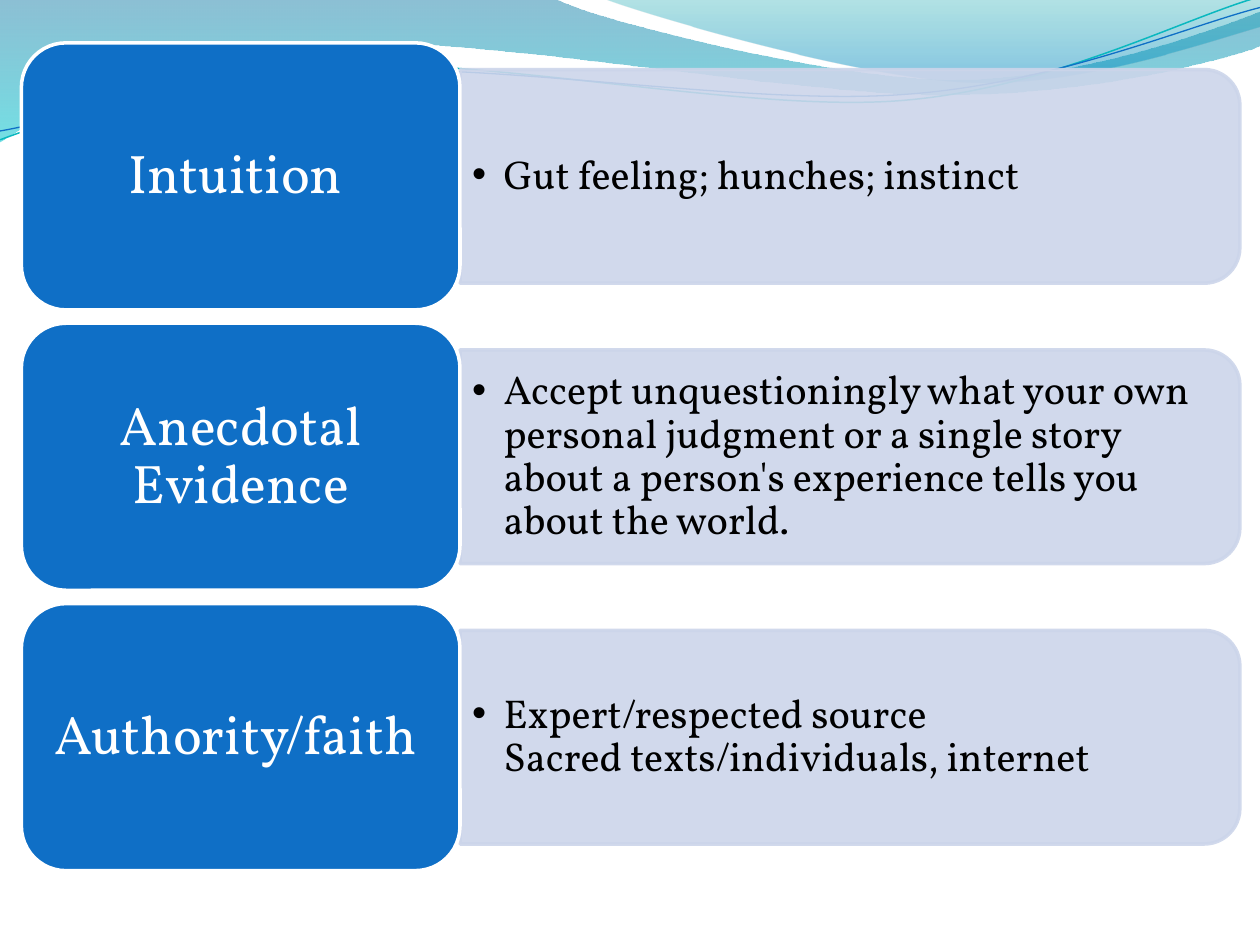
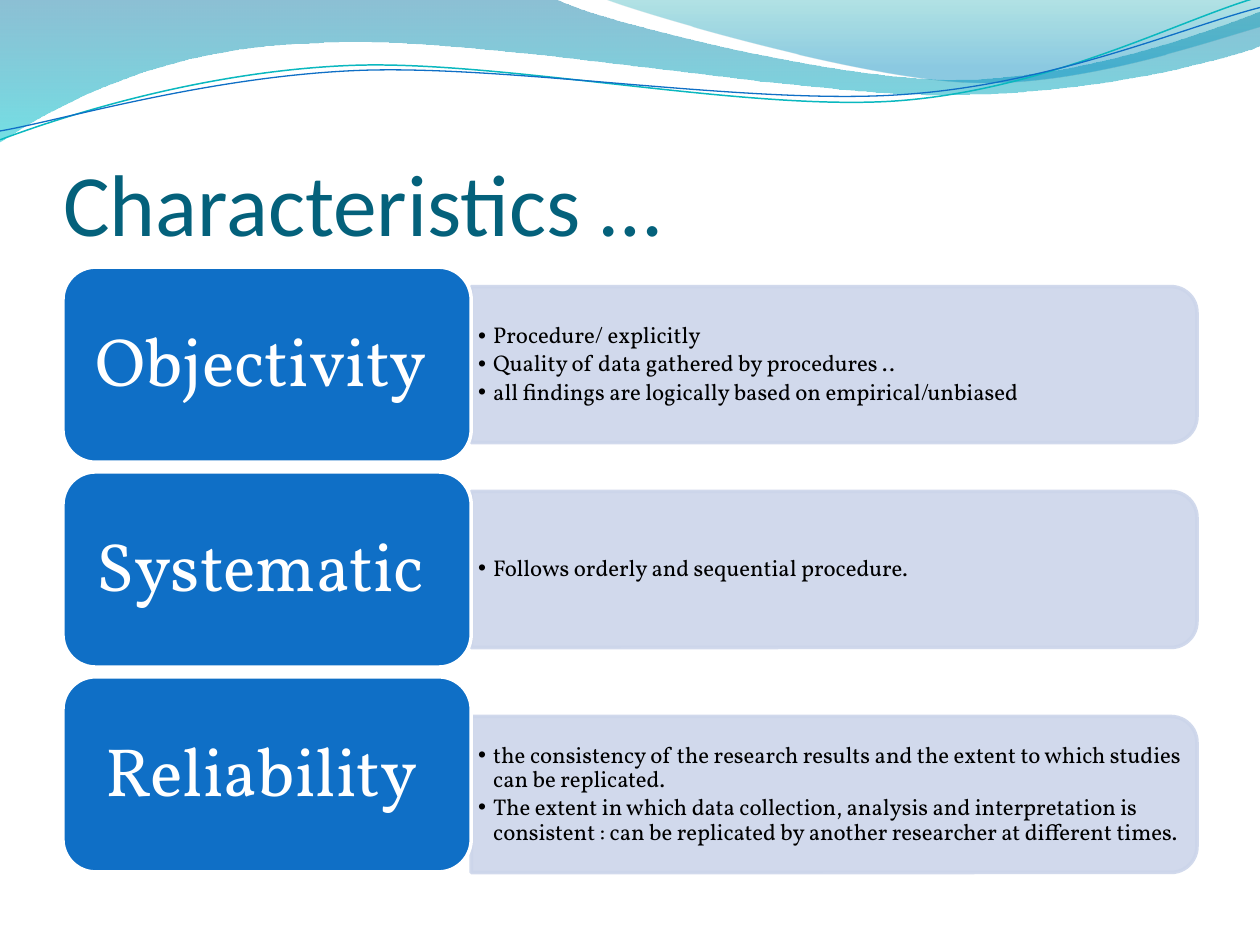
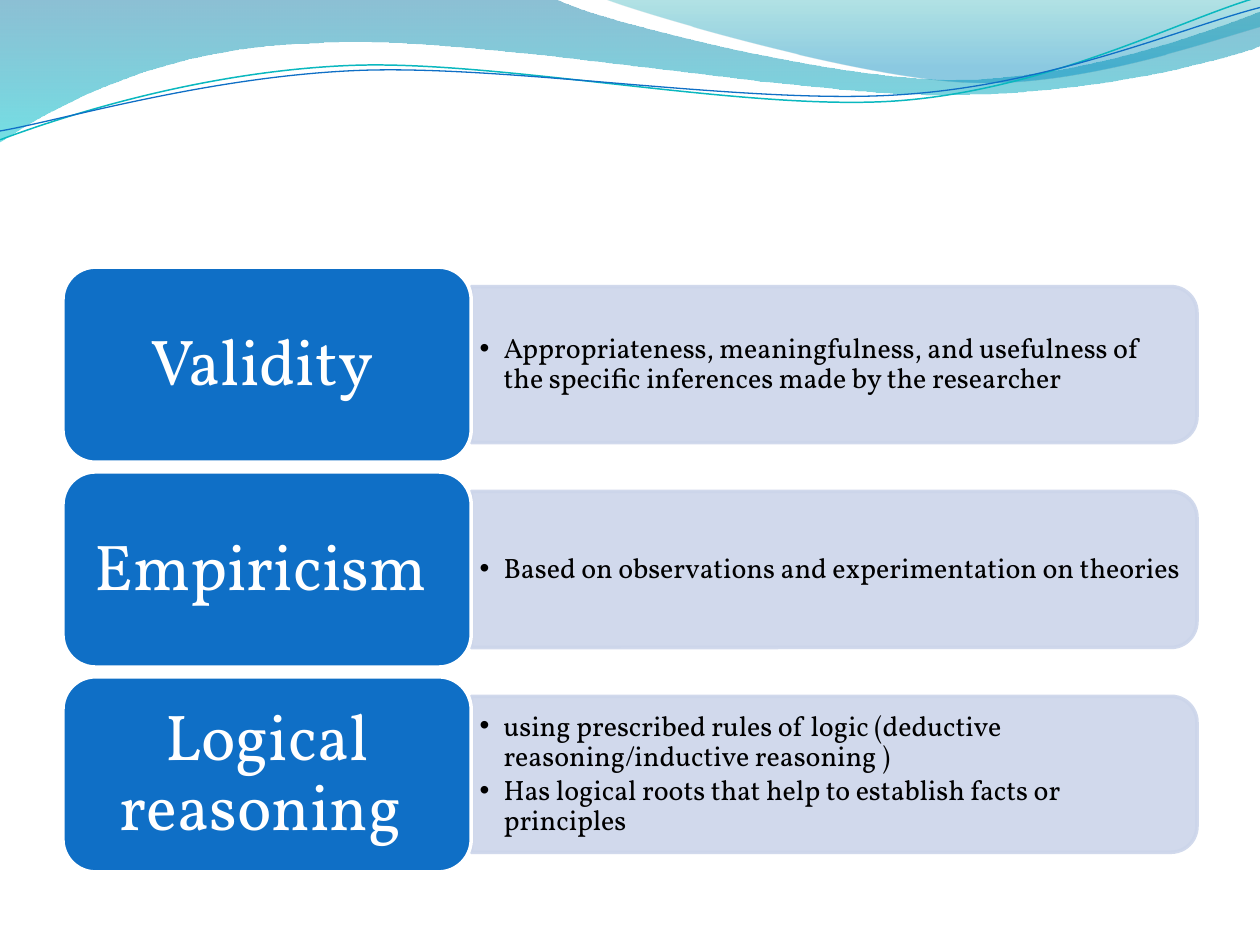
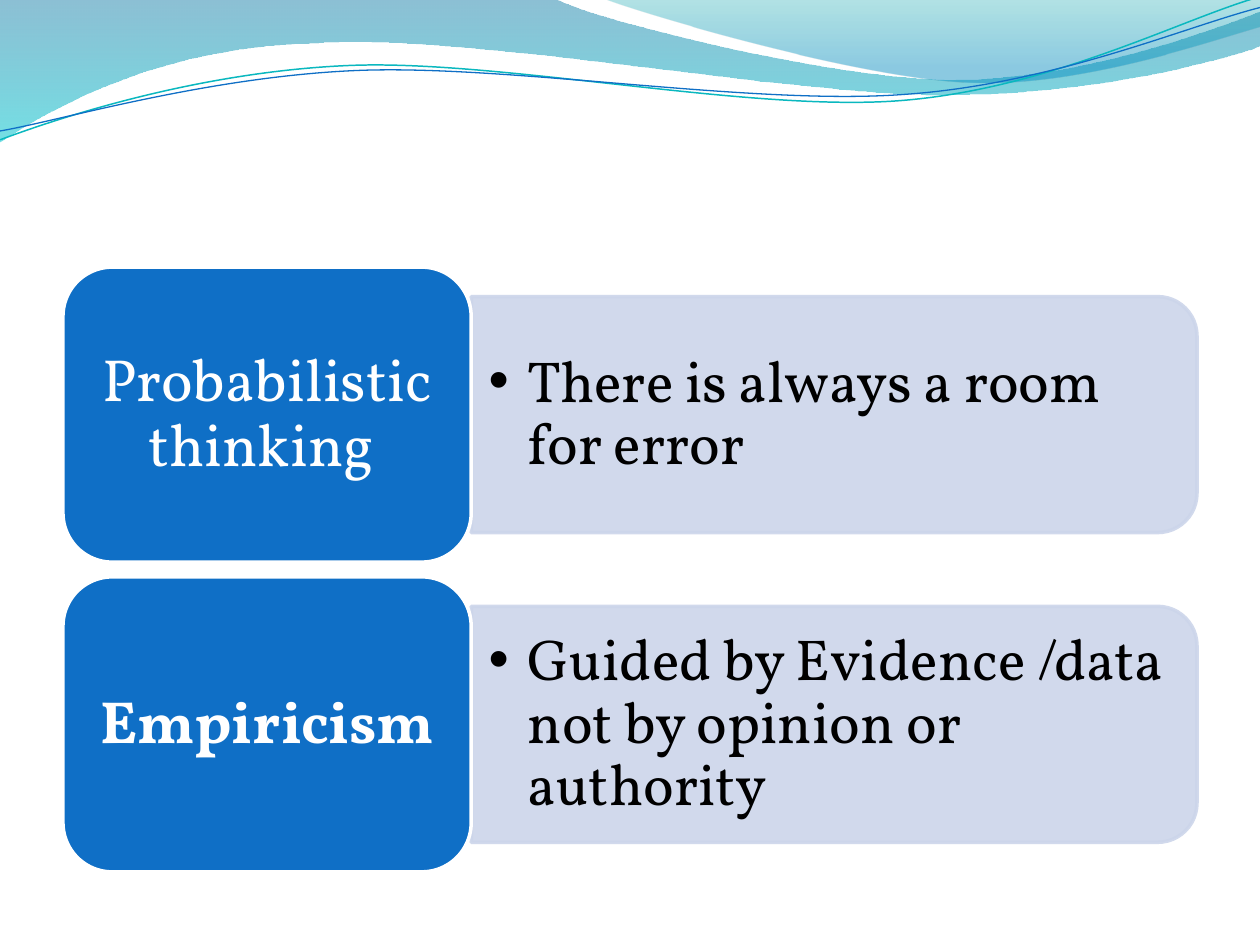
"""Build four slides of label-and-list rows under a shared wave header."""
from math import cos, radians, sin

from lxml.etree import SubElement
from pptx import Presentation
from pptx.dml.color import RGBColor
from pptx.enum.shapes import MSO_SHAPE
from pptx.enum.text import MSO_ANCHOR, MSO_AUTO_SIZE, PP_ALIGN
from pptx.oxml.ns import qn
from pptx.util import Inches, Pt

BLUE, PALE, WHITE, BLACK, TEAL = "0F6FC6", "CCD5EA", "FFFFFF", "000000", "04617B"
LABEL_SHARE, GAP_SHARE, BAND_SHARE, INSET_SHARE = 0.36, 0.05, 0.8, 0.05
TILT = 2.7


def paint(color, value, el=None, alpha=100):
    color.rgb = RGBColor.from_string(value)
    if alpha < 100:
        for clr in el.iter(qn("a:srgbClr")):
            if clr.get("val") == value and len(clr) == 0:
                SubElement(clr, qn("a:alpha")).set("val", str(alpha * 1000))


def write(tf, texts, size, color, font="Vollkorn", align=PP_ALIGN.LEFT, anchor=MSO_ANCHOR.MIDDLE,
          bold=None, spacing=0.9, after=0.0, indent=None, margins=None):
    tf.word_wrap = True
    tf.auto_size = MSO_AUTO_SIZE.NONE
    tf.vertical_anchor = anchor
    side, edge = Pt(size * 0.3), Pt(size * 0.15)
    tf.margin_left, tf.margin_top, tf.margin_right, tf.margin_bottom = margins or (side, edge, side, edge)
    for i, text in enumerate(texts):
        p = tf.add_paragraph() if i else tf.paragraphs[0]
        p.text = text
        p.alignment = align
        p.line_spacing = spacing
        p.space_after = Pt(size * after)
        if indent:
            p.level = 1
            pPr = p._p.get_or_add_pPr()
            pPr.set("marL", str(Inches(indent)))
            pPr.set("indent", str(-Inches(indent)))
            SubElement(pPr, qn("a:buFont")).set("typeface", "Arial")
            SubElement(pPr, qn("a:buChar")).set("char", "•")
        for r in p.runs:
            r.font.name, r.font.size, r.font.bold = font, Pt(size), bold
            paint(r.font.color, color)


waves = [
    dict(start=(0, 0), stops=[(0, "0074A1", 45), (1, "00C6CF", 55)],
         parts=[(4.4, -0.01), (4.76, 0.17, 6.64, 0.63, 7.58, 0.63), (8.53, 0.63, 9.58, 0.26, 10, 0.09),
                (10.01, 0.36), (9.83, 0.44, 8.7, 0.76, 7.46, 0.75), (6.22, 0.75, 3.82, 0.28, 2.57, 0.34),
                (1.29, 0.36, 0.46, 0.83, -0.01, 1.13), (0, 0)]),
    dict(start=(4.79, -0.01), stops=[(0, "00A1A9", 30), (0.8, "008BBF", 45)],
         parts=[(5.09, 0.11, 6.82, 0.62, 7.69, 0.65), (8.56, 0.69, 9.61, 0.32, 10, 0.21), (10, 0),
                (4.79, -0.01)]),
    dict(start=(0, 1.11), line=("0AB8BF", 0.85), center=(4.99, 0.58),
         parts=[(0.48, 0.93, 1.58, 0.57, 2.77, 0.52), (3.95, 0.47, 5.93, 0.89, 7.13, 0.8),
                (8.33, 0.71, 9.38, 0.15, 9.98, -0.02)]),
    dict(start=(0, 1.04), line=(BLUE, 0.75), center=(5, 0.59),
         parts=[(0.47, 0.96, 1.64, 0.61, 2.83, 0.56), (4.03, 0.51, 5.97, 0.84, 7.17, 0.75),
                (8.36, 0.67, 9.41, 0.21, 10, 0.06)]),
]

deck = [
    dict(box=(0.17, 0.34, 9.67, 6.57), sizes=(31, 23), indent=0.25, rows=[
        dict(label="Intuition ", items=["Gut feeling; hunches; instinct"]),
        dict(label="Anecdotal Evidence", items=[
            "Accept unquestioningly what your own personal judgment or a single story "
            "about a person's experience tells you about the world."]),
        dict(label="Authority/faith ", items=[
            "Expert/respected source\vSacred texts/individuals, internet"])]),
    dict(title="Characteristics …", box=(0.5, 2.12, 9, 4.8), sizes=(39, 13), indent=0.12, rows=[
        dict(label="Objectivity ", items=[
            "Procedure/ explicitly",
            "Quality of data gathered by procedures ..",
            "all findings are logically based on empirical/unbiased"]),
        dict(label="Systematic ", items=["Follows orderly and sequential procedure."]),
        dict(label="Reliability ", drop=0.16, items=[
            "the consistency of the research results and the extent to which studies can be replicated.",
            "The extent in which data collection, analysis and interpretation is consistent : "
            "can be replicated by another researcher at different times."])]),
    dict(box=(0.5, 2.12, 9, 4.8), sizes=(37, 16), indent=0.19, rows=[
        dict(label="Validity ", items=[
            "Appropriateness, meaningfulness, and usefulness of the specific inferences "
            "made by the researcher"]),
        dict(label="Empiricism ", items=["Based on observations and experimentation on theories"]),
        dict(label="Logical reasoning ", items=[
            "using prescribed rules of logic (deductive reasoning/inductive reasoning )",
            "Has logical roots that help to establish facts or principles"])]),
    dict(box=(0.5, 2.12, 9, 4.8), sizes=(34, 33), indent=0.31, rows=[
        dict(label="Probabilistic thinking ", items=["There is always a room for error"]),
        dict(label="Empiricism ", bold=True, items=[
            "Guided by Evidence /data not by opinion or authority"])]),
]

prs = Presentation()
prs.slide_width, prs.slide_height = Inches(10), Inches(7.5)
title_only, blank = prs.slide_layouts[5], prs.slide_layouts[6]
slides = [prs.slides.add_slide(title_only if "title" in d else blank) for d in deck]

tree = prs.slide_master.shapes._spTree
for i, wave in enumerate(waves):
    parts = [list(zip(part[::2], part[1::2])) for part in [wave["start"], *wave["parts"]]]
    if "center" in wave:
        cx, cy = wave["center"]
        c, n = cos(radians(TILT)), sin(radians(TILT))
        parts = [[(cx + (x - cx) * c - (y - cy) * n, cy + (x - cx) * n + (y - cy) * c) for x, y in part]
                 for part in parts]
    parts = [[(Inches(x), Inches(y)) for x, y in part] for part in parts]
    fb = slides[0].shapes.build_freeform(*parts[0][0])
    fb.add_line_segments([part[-1] for part in parts[1:]], close="stops" in wave)
    sp = fb.convert_to_shape()
    for ln, part in zip(list(sp.element.iter(qn("a:lnTo"))), parts[1:]):
        if len(part) == 3:
            ln.tag = qn("a:cubicBezTo")
            for k, (x, y) in enumerate(part[:2]):
                pt = SubElement(ln, qn("a:pt"), x=str(x - sp.left), y=str(y - sp.top))
                ln.insert(k, pt)
    sp.shadow.inherit = False
    if "stops" in wave:
        sp.fill.gradient()
        sp.fill.gradient_angle = 270
        for stop, (position, value, alpha) in zip(sp.fill.gradient_stops, wave["stops"]):
            stop.position = position
            paint(stop.color, value, sp.element, alpha)
        sp.line.fill.background()
    else:
        value, width = wave["line"]
        sp.rotation = -TILT
        sp.fill.background()
        paint(sp.line.color, value)
        sp.line.width = Pt(width)
    sp.element.nvSpPr.cNvPr.set("id", str(20 + i))
    tree.insert(2 + i, sp.element)

for s, d in zip(slides, deck):
    if "title" in d:
        sp = s.shapes.title
        sp.left, sp.top, sp.width, sp.height = Inches(0.5), Inches(0.77), Inches(9), Inches(1.25)
        write(sp.text_frame, [d["title"]], 50, TEAL, font="Calibri", anchor=MSO_ANCHOR.BOTTOM,
              spacing=1.0, margins=(0, Inches(0.05), 0, 0))
    left, top, width, height = d["box"]
    label_size, item_size = d["sizes"]
    n = len(d["rows"])
    row_h = height / (n + GAP_SHARE * (n - 1))
    label_w, inset = width * LABEL_SHARE, row_h * INSET_SHARE
    band_x, band_w, band_h = left + label_w, width - label_w, row_h * BAND_SHARE
    text_h = band_h * 0.9
    shapes = s.shapes.add_group_shape().shapes
    for i, row in enumerate(d["rows"]):
        y = top + i * row_h * (1 + GAP_SHARE)
        mid = y + row_h / 2 + row.get("drop", 0)

        band = shapes.add_shape(
            MSO_SHAPE.ROUND_2_SAME_RECTANGLE, Inches(band_x + (band_w - band_h) / 2),
            Inches(mid - band_w / 2), Inches(band_h), Inches(band_w))
        band.rotation = 90
        band.shadow.inherit = False
        band.fill.solid()
        paint(band.fill.fore_color, PALE, band.element, 90)
        paint(band.line.color, PALE, band.element, 90)
        band.line.width = Pt(2)

        tb = shapes.add_textbox(Inches(band_x), Inches(mid - text_h / 2),
                                Inches(band_w - band_h * 0.05), Inches(text_h))
        write(tb.text_frame, row["items"], item_size, BLACK, after=0.15, indent=d["indent"])

        label = shapes.add_shape(MSO_SHAPE.ROUNDED_RECTANGLE, Inches(left), Inches(y),
                                 Inches(label_w), Inches(row_h))
        label.shadow.inherit = False
        label.fill.solid()
        paint(label.fill.fore_color, BLUE)
        paint(label.line.color, WHITE)
        label.line.width = Pt(2)

        tb = shapes.add_textbox(Inches(left + inset), Inches(y + inset),
                                Inches(label_w - 2 * inset), Inches(row_h - 2 * inset))
        write(tb.text_frame, [row["label"]], label_size, WHITE, align=PP_ALIGN.CENTER,
              bold=row.get("bold"), after=0.35)

prs.save("out.pptx")
